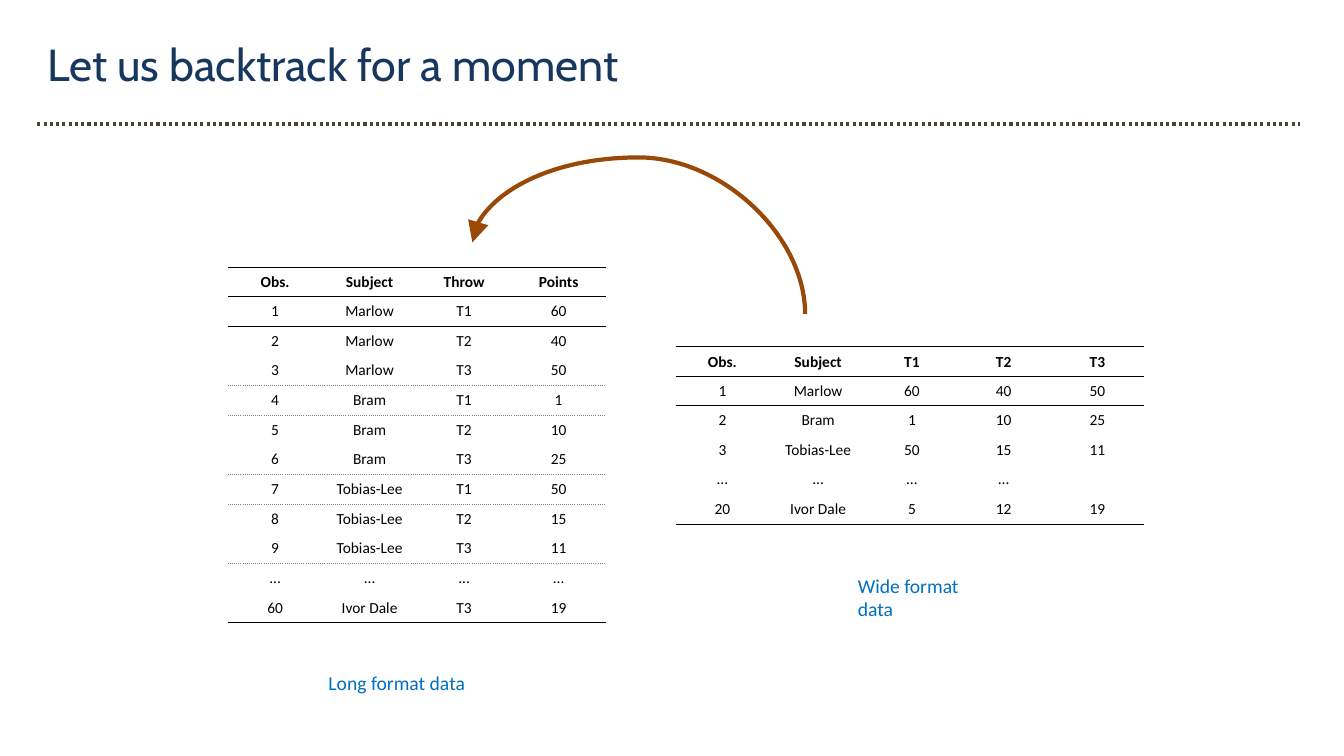
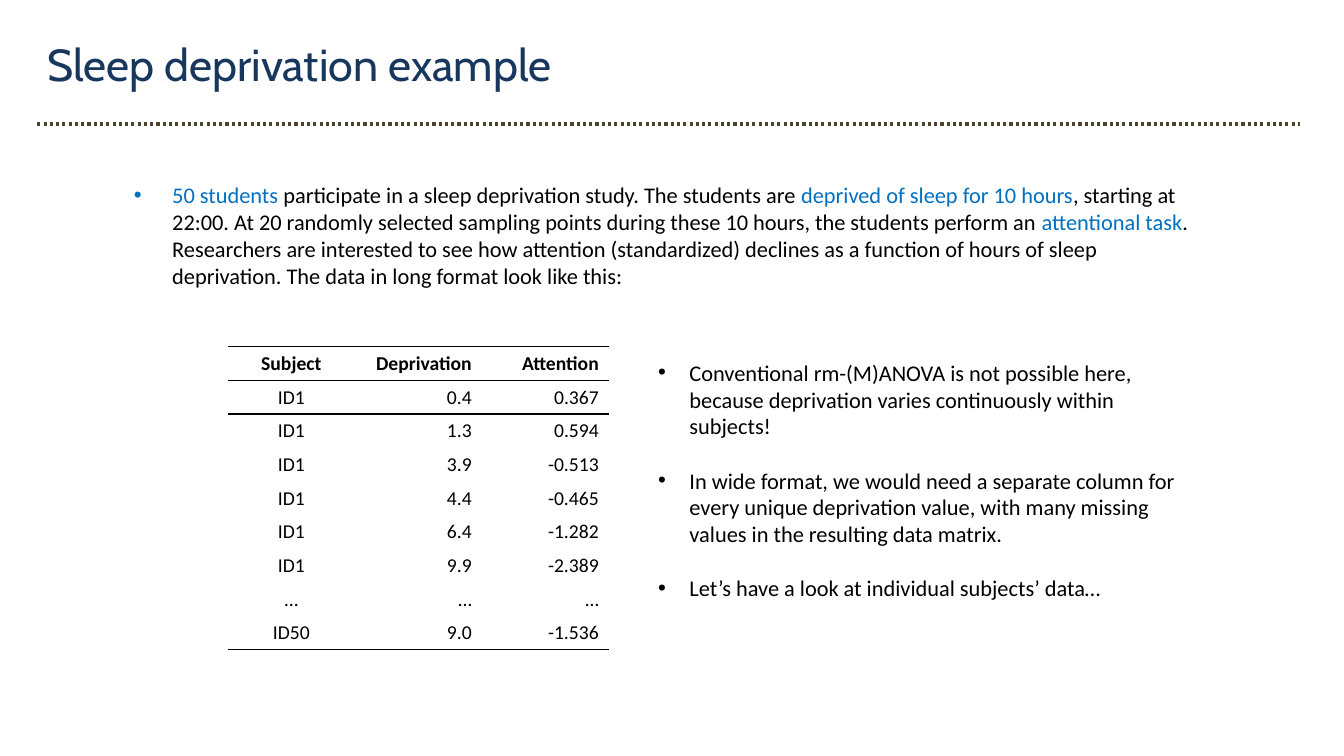
from dataclasses import dataclass
from typing import NamedTuple

from lxml import etree
from pptx import Presentation
from pptx.dml.color import RGBColor
from pptx.enum import dml, shapes, text
from pptx.oxml import ns
from pptx.util import Inches, Pt

COLORS = {
    "title": "17375E",
    "divider": "4A452A",
    "arrow": "984807",
    "accent": "0070C0",
    "body": "000000",
    "dotted": "808080",
}
TITLE_FONT, BODY_FONT = "Cabin", "Calibri"
NO_GRID_STYLE = "{2D5ABB26-0587-4C30-8999-92F81FD0307C}"
LEFT, CENTER, RIGHT = text.PP_ALIGN.LEFT, text.PP_ALIGN.CENTER, text.PP_ALIGN.RIGHT


class Box(NamedTuple):
    left: float
    top: float
    width: float
    height: float

    def lengths(self) -> list:
        return [Inches(value) for value in self]


class Span(NamedTuple):
    text: str
    color: str = "body"


@dataclass
class DataTable:
    """Rows of text with solid or dotted rules below the listed row numbers."""
    left: float
    top: float
    col_widths: list
    row_height: float
    rows: list
    aligns: list
    size: int
    solid: tuple
    dotted: tuple = ()


def write(para, content: str, *, size: float, color: str = "body",
          font: str = BODY_FONT, bold: bool = False, align=LEFT) -> None:
    para.alignment = align
    if not content:
        etree.SubElement(para._p, ns.qn("a:endParaRPr"), sz=str(size * 100))
        return
    span = para.add_run()
    span.text = content
    span.font.size = Pt(size)
    span.font.name = font
    span.font.bold = bold
    span.font.color.rgb = RGBColor.from_string(COLORS[color])


def add_frame(page, box: Box, grow: bool = True):
    frame = page.shapes.add_textbox(*box.lengths()).text_frame
    frame.word_wrap = True
    if grow:
        frame.auto_size = text.MSO_AUTO_SIZE.SHAPE_TO_FIT_TEXT
    return frame


def add_bullets(page, box: Box, items: list, indent: float, gap: float = 0, grow: bool = True) -> None:
    frame = add_frame(page, box, grow)
    for number, spans in enumerate(items):
        para = frame.add_paragraph() if number else frame.paragraphs[0]
        for span in spans:
            write(para, span.text, size=16, color=span.color)
        if number:
            para.space_before = Pt(gap)
        props = para._p.get_or_add_pPr()
        props.set("marL", str(Inches(indent)))
        props.set("indent", str(-Inches(indent)))
        etree.SubElement(props, ns.qn("a:buFont"), typeface="Arial")
        etree.SubElement(props, ns.qn("a:buChar"), char="•")


def style_connector(connector, color: str, width: float) -> None:
    connector.line.color.rgb = RGBColor.from_string(COLORS[color])
    connector.line.width = Pt(width)
    etree.SubElement(connector._element.spPr, ns.qn("a:effectLst"))


def add_page(deck, title: str):
    """Add a blank slide with the shared title and dotted divider."""
    page = deck.slides.add_slide(deck.slide_layouts[6])
    frame = add_frame(page, Box(0.37, 0.32, 11.65, 0.64))
    write(frame.paragraphs[0], title, size=32, color="title", font=TITLE_FONT)
    divider = page.shapes.add_connector(
        shapes.MSO_CONNECTOR.STRAIGHT, Inches(0.37), Inches(1.23), Inches(12.89), Inches(1.23))
    style_connector(divider, "divider", 2.25)
    divider.line.dash_style = dml.MSO_LINE.ROUND_DOT
    return page


def add_rule(cell, side: str, color: str, dash: str) -> None:
    line = etree.SubElement(cell._tc.get_or_add_tcPr(), ns.qn(f"a:{side}"), w=str(Pt(1)))
    fill = etree.SubElement(line, ns.qn("a:solidFill"))
    etree.SubElement(fill, ns.qn("a:srgbClr"), val=COLORS[color])
    etree.SubElement(line, ns.qn("a:prstDash"), val=dash)


def add_data_table(page, data: DataTable) -> None:
    box = Box(data.left, data.top, sum(data.col_widths), data.row_height * len(data.rows))
    table = page.shapes.add_table(len(data.rows), len(data.col_widths), *box.lengths()).table
    table.first_row = table.horz_banding = False
    table._tbl.tblPr.find(ns.qn("a:tableStyleId")).text = NO_GRID_STYLE
    for column, width in zip(table.columns, data.col_widths):
        column.width = Inches(width)
    for r, values in enumerate(data.rows):
        table.rows[r].height = Inches(data.row_height)
        for c, value in enumerate(values):
            cell = table.cell(r, c)
            write(cell.text_frame.paragraphs[0], value, size=data.size, bold=r == 0,
                  align=data.aligns[c])
            if r == 0:
                cell.vertical_anchor = text.MSO_ANCHOR.BOTTOM
                add_rule(cell, "lnT", "body", "solid")
            if r in data.solid:
                add_rule(cell, "lnB", "body", "solid")
            elif r in data.dotted:
                add_rule(cell, "lnB", "dotted", "sysDot")
            cell.fill.background()


def add_curved_arrow(page) -> None:
    """Arc from the wide table over to the long table."""
    arrow = page.shapes.add_connector(
        shapes.MSO_CONNECTOR.CURVE, Inches(5.98), Inches(4.41), Inches(6.69), Inches(1.11))
    style_connector(arrow, "arrow", 3)
    props = arrow._element.spPr
    props.find(ns.qn("a:xfrm")).set("rot", str(270 * 60000))
    geometry = props.find(ns.qn("a:prstGeom"))
    guides = geometry.find(ns.qn("a:avLst"))
    if guides is None:
        guides = etree.SubElement(geometry, ns.qn("a:avLst"))
    etree.SubElement(guides, ns.qn("a:gd"), name="adj1", fmla="val 218800")
    etree.SubElement(props.find(ns.qn("a:ln")), ns.qn("a:tailEnd"),
                     type="triangle", w="lg", len="lg")


def build_formats_page(deck) -> None:
    page = add_page(deck, "Let us backtrack for a moment")
    throws = ["T1", "T2", "T3"]
    scores = {"Marlow": ["60", "40", "50"], "Bram": ["1", "10", "25"],
              "Tobias-Lee": ["50", "15", "11"]}
    last_subject = "Ivor Dale"
    long_rows = [[subject, throw, points] for subject, row in scores.items()
                 for throw, points in zip(throws, row)]
    add_data_table(page, DataTable(
        2.26, 2.65, [3.75 / 4] * 4, 3.53 / 12,
        [["Obs.", "Subject", "Throw", "Points"],
         *[[str(n), *row] for n, row in enumerate(long_rows, 1)],
         ["..."] * 4,
         ["60", last_subject, "T3", "19"]],
        [CENTER] * 4, 11, solid=(0, 1, 11), dotted=(3, 4, 6, 7, 9)))
    add_data_table(page, DataTable(
        6.7, 3.44, [0.93, 0.97, 0.89, 0.93, 0.93], 1.76 / 6,
        [["Obs.", "Subject", *throws],
         *[[str(n), subject, *row] for n, (subject, row) in enumerate(scores.items(), 1)],
         ["..."] * 4 + [""],
         ["20", last_subject, "5", "12", "19"]],
        [CENTER] * 5, 11, solid=(0, 1, 5)))
    add_curved_arrow(page)
    for caption, box in (("Long format data", Box(3.16, 6.61, 1.6, 0.34)),
                         ("Wide format data", Box(8.41, 5.64, 1.55, 0.34))):
        write(add_frame(page, box).paragraphs[0], caption, size=14, color="accent")


def build_sleep_page(deck) -> None:
    page = add_page(deck, "Sleep deprivation example")
    add_bullets(page, Box(1.23, 1.75, 10.71, 1.3), [[
        Span("50 students ", "accent"),
        Span("participate in a sleep deprivation study. The students are "),
        Span("deprived of sleep for 10 hours", "accent"),
        Span(", starting at 22:00. At 20 randomly selected sampling points during these "
             "10 hours, the students perform an "),
        Span("attentional task", "accent"),
        Span(". Researchers are interested to see how attention (standardized) declines as a "
             "function of hours of sleep deprivation. The data in long format look like this:"),
    ]], indent=0.38, grow=False)
    measures = [("0.4", "0.367"), ("1.3", "0.594"), ("3.9", "-0.513"), ("4.4", "-0.465"),
                ("6.4", "-1.282"), ("9.9", "-2.389")]
    add_data_table(page, DataTable(
        2.26, 3.44, [1.26] * 3, 3 / 9,
        [["Subject", "Deprivation", "Attention"],
         *[["ID1", *pair] for pair in measures],
         ["…"] * 3,
         ["ID50", "9.0", "-1.536"]],
        [CENTER, RIGHT, RIGHT], 14, solid=(0, 1, 8)))
    add_bullets(page, Box(6.43, 3.51, 5.51, 2.52), [
        [Span("Conventional rm-(M)ANOVA is not possible here, because deprivation varies "
              "continuously within subjects!")],
        [Span("In wide format, we would need a separate column for every unique deprivation "
              "value, with many missing values in the resulting data matrix.")],
        [Span("Let’s have a look at individual subjects’ data…")],
    ], indent=0.31, gap=19.5)


def main() -> None:
    deck = Presentation()
    deck.slide_width, deck.slide_height = Inches(13.33), Inches(7.5)
    build_formats_page(deck)
    build_sleep_page(deck)
    deck.save("out.pptx")


if __name__ == "__main__":
    main()
